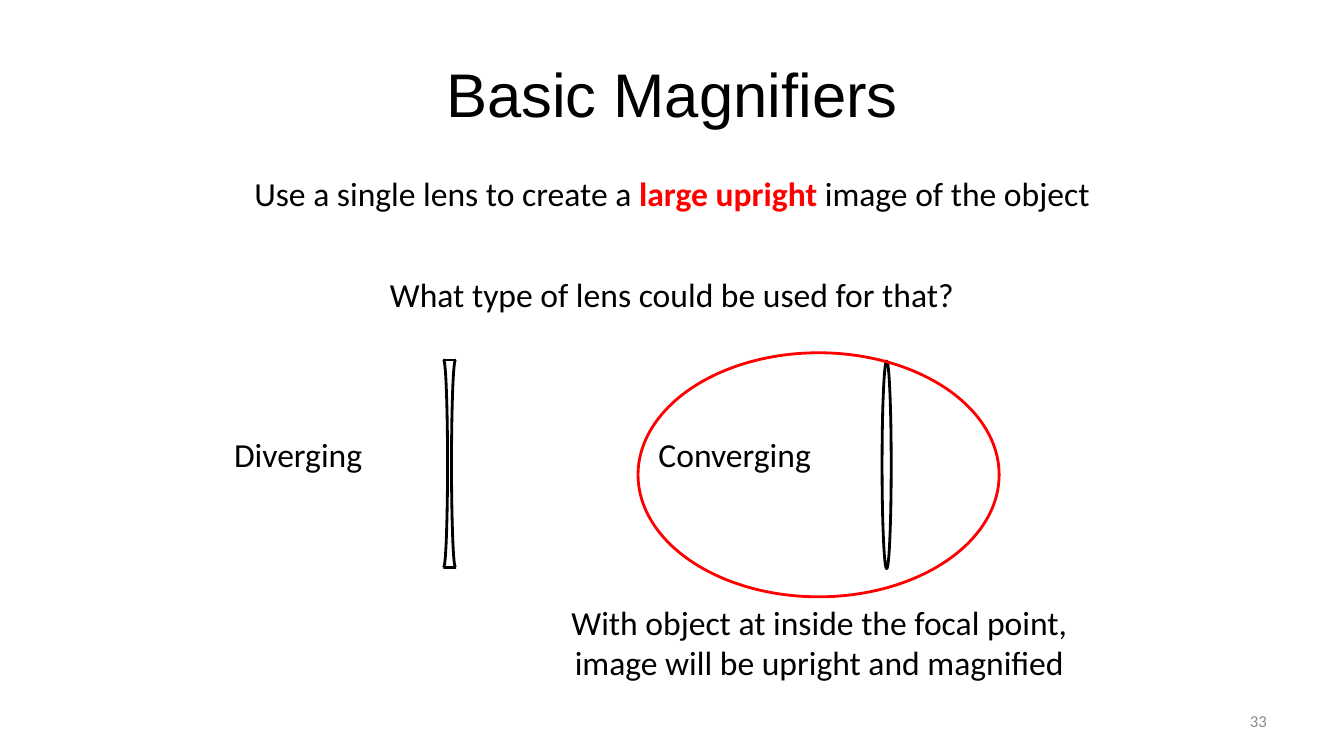
from dataclasses import dataclass

from lxml import etree
from pptx import Presentation
from pptx.dml.color import RGBColor
from pptx.enum import shapes as kinds, text as txt
from pptx.oxml.ns import qn
from pptx.util import Cm, Pt


@dataclass(frozen=True)
class Theme:
    ink: RGBColor = RGBColor(0x00, 0x00, 0x00)
    red: RGBColor = RGBColor(0xFF, 0x00, 0x00)
    gray: RGBColor = RGBColor(0x8C, 0x8C, 0x8C)
    head: str = "Arial"
    body: str = "Calibri"
    title: int = 44
    main: int = 24
    small: int = 12
    stroke: int = 2


THEME = Theme()


@dataclass(frozen=True)
class Box:
    left: float
    top: float
    width: float
    height: float

    def cm(self) -> tuple[Cm, Cm, Cm, Cm]:
        return Cm(self.left), Cm(self.top), Cm(self.width), Cm(self.height)


@dataclass(frozen=True)
class Label:
    """Text in a box; every second phrase is bold red."""
    box: Box
    phrases: tuple[str, ...]
    size: int = THEME.main
    font: str = THEME.body
    color: RGBColor = THEME.ink
    align: txt.PP_ALIGN = txt.PP_ALIGN.CENTER
    middle: bool = False


@dataclass(frozen=True)
class Curve:
    box: Box
    kind: kinds.MSO_SHAPE = kinds.MSO_SHAPE.OVAL
    color: RGBColor = THEME.ink
    flip: bool = False


LENS_TOP, LENS_TALL = 9.07, 5.23
ARC_WIDE, ARC_GAP, ARC_LEFT = 0.2, 0.3, 11.08
HALF_TURN = (161.953, 54.052)
NAME_TOP = 10.8

LABELS = (
    Label(Box(1.7, 0.76, 30.48, 3.18), ("Basic Magnifiers",),
          THEME.title, THEME.head, middle=True),
    Label(Box(4.55, 4.24, 24.77, 1.28),
          ("Use a single lens to create a ", "large upright ", "image of the object")),
    Label(Box(4.55, 6.78, 24.77, 1.28), ("What type of lens could be used for that?",)),
    Label(Box(4.24, NAME_TOP, 6.55, 1.28), ("Diverging",)),
    Label(Box(15.24, NAME_TOP, 6.55, 1.28), ("Converging",)),
    Label(Box(13.13, 15.04, 15.04, 2.31),
          ("With object at inside the focal point, image will be upright and magnified",)),
    Label(Box(24.28, 17.65, 7.9, 1.02), ("33",), THEME.small,
          color=THEME.gray, align=txt.PP_ALIGN.RIGHT, middle=True),
)
OVALS = (
    Curve(Box(22.23, 9.1, 0.23, LENS_TALL)),
    Curve(Box(16.08, 8.89, 9.1, 6.15), color=THEME.red),
)


def write(slide, label: Label) -> None:
    frame = slide.shapes.add_textbox(*label.box.cm()).text_frame
    frame.word_wrap = True
    if label.middle:
        frame.vertical_anchor = txt.MSO_ANCHOR.MIDDLE
    else:
        frame.auto_size = txt.MSO_AUTO_SIZE.SHAPE_TO_FIT_TEXT
    para = frame.paragraphs[0]
    para.alignment = label.align
    for place, phrase in enumerate(label.phrases):
        run = para.add_run()
        run.text = phrase
        strong = place % 2 == 1
        run.font.name = label.font
        run.font.size = Pt(label.size)
        run.font.bold = strong
        run.font.color.rgb = THEME.red if strong else label.color


def trace(parent, curve: Curve) -> None:
    shape = parent.shapes.add_shape(curve.kind, *curve.box.cm())
    shape.shadow.inherit = False
    shape.fill.background()
    shape.line.color.rgb = curve.color
    shape.line.width = Pt(THEME.stroke)
    if curve.kind == kinds.MSO_SHAPE.ARC:
        for place, angle in enumerate(HALF_TURN):
            shape.adjustments[place] = angle
    if curve.flip:
        shape.element.spPr.find(qn("a:xfrm")).set("flipH", "1")


def cap(parent, top: float) -> None:
    """Close one end of the diverging lens."""
    left = ARC_LEFT + ARC_WIDE / 2
    line = parent.shapes.add_connector(
        kinds.MSO_CONNECTOR.STRAIGHT,
        Cm(left), Cm(top), Cm(left + ARC_GAP), Cm(top))
    line.line.color.rgb = THEME.ink
    line.line.width = Pt(THEME.stroke)
    etree.SubElement(line.element.spPr, qn("a:effectLst"))


def diverge(slide) -> None:
    group = slide.shapes.add_group_shape()
    for side in (0, 1):
        box = Box(ARC_LEFT + side * ARC_GAP, LENS_TOP, ARC_WIDE, LENS_TALL)
        trace(group, Curve(box, kinds.MSO_SHAPE.ARC, flip=side == 1))
    for top in (LENS_TOP + LENS_TALL, LENS_TOP):
        cap(group, top)


def main() -> None:
    deck = Presentation()
    deck.slide_width, deck.slide_height = Cm(33.87), Cm(19.05)
    slide = deck.slides.add_slide(deck.slide_layouts[6])
    for oval in OVALS:
        trace(slide, oval)
    diverge(slide)
    for label in LABELS:
        write(slide, label)
    deck.save("out.pptx")


if __name__ == "__main__":
    main()
